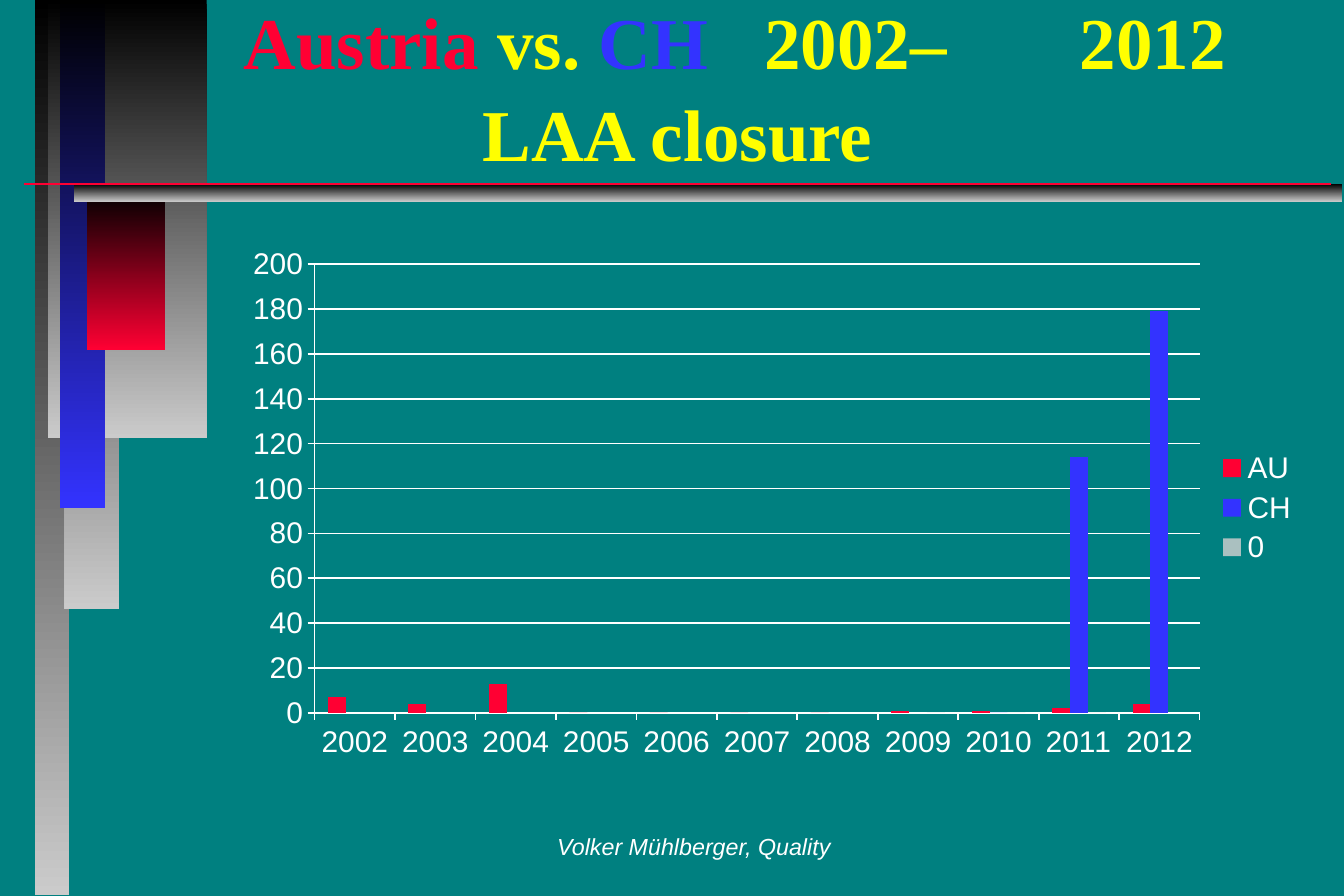
import pptx
import pptx.chart.data
import pptx.dml.color
import pptx.enum.chart
import pptx.enum.shapes
import pptx.enum.text
import pptx.oxml
import pptx.oxml.ns
import pptx.util
from pptx.util import Inches

COLORS = {
    "teal": "008080", "black": "000000", "silver": "CBCBCB", "blue": "3333FF",
    "red": "FF0033", "yellow": "FFFF00", "white": "FFFFFF", "gray": "AAC0C0",
}


def rgb(name):
    return pptx.dml.color.RGBColor.from_string(COLORS[name])


def add_span(para, text, *, size, font, color, bold=False, italic=False):
    span = para.add_run()
    span.text = text
    span.font.size = pptx.util.Pt(size)
    span.font.name = font
    span.font.bold = bold
    span.font.italic = italic
    span.font.color.rgb = rgb(color)


deck = pptx.Presentation()
deck.slide_width = Inches(11.25)
deck.slide_height = Inches(7.5)
page = deck.slides.add_slide(deck.slide_layouts[6])
page.background.fill.solid()
page.background.fill.fore_color.rgb = rgb("teal")

bars = [
    (0.29, 0, 0.29, 7.49, "silver"),
    (0.54, 0, 0.46, 5.1, "silver"),
    (0.4, 0, 1.33, 3.67, "silver"),
    (0.5, 0, 0.38, 4.25, "blue"),
    (0.73, 1.6, 0.65, 1.33, "red"),
    (0.62, 1.54, 10.61, 0.15, "silver"),
]
for left, top, width, height, color in bars:
    bar = page.shapes.add_shape(
        pptx.enum.shapes.MSO_SHAPE.RECTANGLE,
        Inches(left), Inches(top), Inches(width), Inches(height))
    bar.shadow.inherit = False
    bar.line.fill.background()
    bar.fill.gradient()
    bar.fill.gradient_angle = 270
    for stop, position, name in zip(bar.fill.gradient_stops, (0, 1), ("black", color)):
        stop.position = position
        stop.color.rgb = rgb(name)

rule = page.shapes.add_connector(
    pptx.enum.shapes.MSO_CONNECTOR.STRAIGHT,
    Inches(0.2), Inches(1.54), Inches(11.14), Inches(1.54))
rule.line.color.rgb = rgb("red")
rule.line.width = pptx.util.Pt(1)
rule._element.spPr.append(pptx.oxml.parse_xml(
    f"<a:effectLst {pptx.oxml.ns.nsdecls('a')}/>"))

title = page.shapes.add_textbox(Inches(0.94), Inches(0.25), Inches(9.56), Inches(1.27))
title.text_frame.word_wrap = True
title.text_frame.vertical_anchor = pptx.enum.text.MSO_ANCHOR.BOTTOM
para = title.text_frame.paragraphs[0]
para.line_spacing = 1.05
tabs = "".join(f'<a:tab pos="{Inches(stop)}" algn="l"/>' for stop in (1, 3, 5.36, 8))
para._p.get_or_add_pPr().append(pptx.oxml.parse_xml(
    f"<a:tabLst {pptx.oxml.ns.nsdecls('a')}>{tabs}</a:tabLst>"))
title_style = {"size": 44, "font": "Times New Roman", "bold": True}
for text, color in [("\tAustria", "red"), (" vs. ", "yellow"), ("CH", "blue"),
                    ("\t2002–\t2012", "yellow")]:
    add_span(para, text, color=color, **title_style)
para.add_line_break()
add_span(para, "\t\tLAA closure", color="yellow", **title_style)

closures = pptx.chart.data.CategoryChartData()
closures.categories = [str(year) for year in range(2002, 2013)]
closures.add_series("AU", [7, 4, 13, 0, 0, 0, 0, 1, 1, 2, 4])
closures.add_series("CH", [None] * 8 + [0, 114, 179])
closures.add_series("0", [None] * 7 + [0, 0, 0, None])
chart = page.shapes.add_chart(
    pptx.enum.chart.XL_CHART_TYPE.COLUMN_CLUSTERED,
    Inches(1.41), Inches(2), Inches(9.56), Inches(4.5), closures).chart
chart.has_title = False
chart.font.size = pptx.util.Pt(18)
chart.font.name = "Arial"
chart.font.color.rgb = rgb("white")
chart.has_legend = True
chart.legend.position = pptx.enum.chart.XL_LEGEND_POSITION.RIGHT
chart.legend.include_in_layout = False

plot = chart.plots[0]
plot.vary_by_categories = False
plot.gap_width = 150
plot.overlap = 0
for series, color in zip(plot.series, ("red", "blue", "gray")):
    series.invert_if_negative = False
    series.format.fill.solid()
    series.format.fill.fore_color.rgb = rgb(color)

for axis in (chart.category_axis, chart.value_axis):
    axis.major_tick_mark = pptx.enum.chart.XL_TICK_MARK.OUTSIDE
    axis.format.line.color.rgb = rgb("white")
    axis.format.line.width = pptx.util.Pt(1)
scale = chart.value_axis
scale.minimum_scale = 0
scale.maximum_scale = 200
scale.major_unit = 20
scale.has_major_gridlines = True
scale.major_gridlines.format.line.color.rgb = rgb("white")
scale.major_gridlines.format.line.width = pptx.util.Pt(1)

plot_area = chart._chartSpace.chart.plotArea
for old_layout in plot_area.findall(pptx.oxml.ns.qn("c:layout")):
    plot_area.remove(old_layout)
places = "".join(f'<c:{key} val="{value}"/>' for key, value in [
    ("layoutTarget", "inner"), ("xMode", "edge"), ("yMode", "edge"),
    ("x", 0.128), ("y", 0.047), ("w", 0.775), ("h", 0.835)])
plot_area.insert(0, pptx.oxml.parse_xml(
    f"<c:layout {pptx.oxml.ns.nsdecls('c')}>"
    f"<c:manualLayout>{places}</c:manualLayout></c:layout>"))

footer = page.shapes.add_textbox(Inches(4.03), Inches(6.83), Inches(3.56), Inches(0.5))
footer.text_frame.word_wrap = False
footer.text_frame.vertical_anchor = pptx.enum.text.MSO_ANCHOR.MIDDLE
para = footer.text_frame.paragraphs[0]
para.alignment = pptx.enum.text.PP_ALIGN.CENTER
add_span(para, "Volker Mühlberger, Quality", size=14, font="Arial",
         color="white", italic=True)

deck.save("out.pptx")
